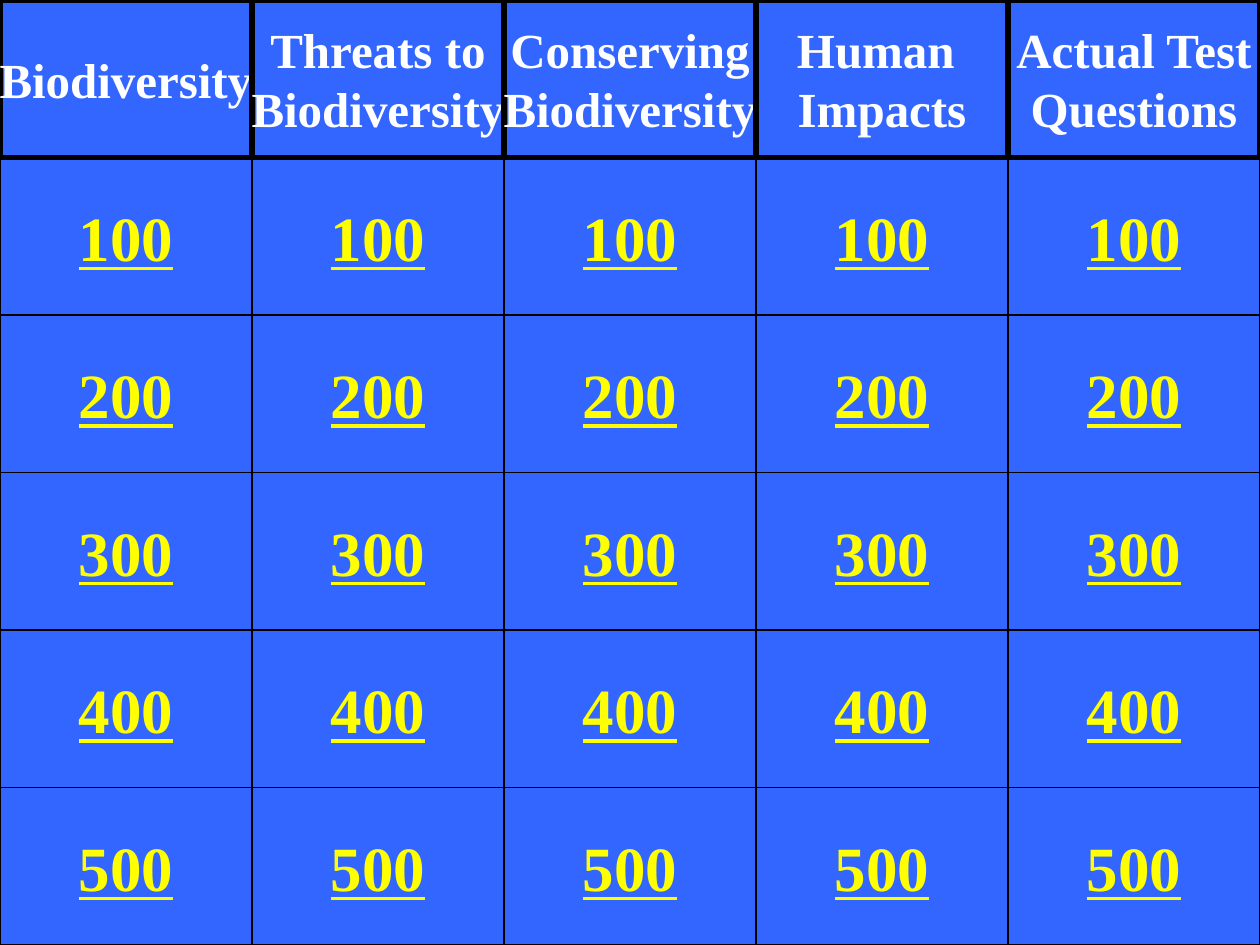
"""Build a quiz board with five categories and five point values."""
import pptx
import pptx.dml.color
import pptx.enum.shapes
import pptx.enum.text
import pptx.util

Inches = pptx.util.Inches
Shape = pptx.enum.shapes.MSO_SHAPE

CATEGORIES = [
    ["Biodiversity"],
    ["Threats to", "Biodiversity"],
    ["Conserving", "Biodiversity"],
    ["Human ", "Impacts"],
    ["Actual Test", "Questions"],
]
POINTS = ["100", "200", "300", "400", "500"]

SLIDE_WIDTH, SLIDE_HEIGHT = 10, 7.5
CELL_WIDTH = SLIDE_WIDTH / len(CATEGORIES)
CELL_HEIGHT = SLIDE_HEIGHT / (len(POINTS) + 1)

THEME = {
    "board": "3366FF",
    "border": "000000",
    "header": {
        "shape": Shape.RECTANGLE,
        "border_width": 3,
        "color": "FFFFFF",
        "font": {"name": "Times New Roman", "size": pptx.util.Pt(28),
                 "bold": True},
    },
    "points": {
        "shape": Shape.ACTION_BUTTON_CUSTOM,
        "border_width": 0.75,
        "color": "FFFF00",
        "font": {"name": "Times New Roman", "size": pptx.util.Pt(36),
                 "bold": True, "underline": True},
    },
}
FRAME_FORMAT = {
    "word_wrap": False,
    "vertical_anchor": pptx.enum.text.MSO_ANCHOR.MIDDLE,
}


def paint(fill, color):
    fill.solid()
    fill.fore_color.rgb = pptx.dml.color.RGBColor.from_string(color)


def set_attributes(target, values):
    for name, value in values.items():
        setattr(target, name, value)


def add_cell(page, column, row, lines, style):
    box = page.shapes.add_shape(
        style["shape"],
        Inches(column * CELL_WIDTH), Inches(row * CELL_HEIGHT),
        Inches(CELL_WIDTH), Inches(CELL_HEIGHT))
    box.shadow.inherit = False
    paint(box.fill, THEME["board"])
    paint(box.line.fill, THEME["border"])
    box.line.width = pptx.util.Pt(style["border_width"])
    frame = box.text_frame
    set_attributes(frame, FRAME_FORMAT)
    for index, line in enumerate(lines):
        para = frame.add_paragraph() if index else frame.paragraphs[0]
        para.alignment = pptx.enum.text.PP_ALIGN.CENTER
        span = para.add_run()
        span.text = line
        set_attributes(span.font, style["font"])
        paint(span.font.fill, style["color"])


def main():
    deck = pptx.Presentation()
    deck.slide_width = Inches(SLIDE_WIDTH)
    deck.slide_height = Inches(SLIDE_HEIGHT)
    page = deck.slides.add_slide(deck.slide_layouts[6])
    paint(page.background.fill, THEME["board"])
    for column in range(len(CATEGORIES)):
        for row, points in enumerate(POINTS, start=1):
            add_cell(page, column, row, [points], THEME["points"])
    for column, lines in enumerate(CATEGORIES):
        add_cell(page, column, 0, lines, THEME["header"])
    deck.save("out.pptx")


if __name__ == "__main__":
    main()
